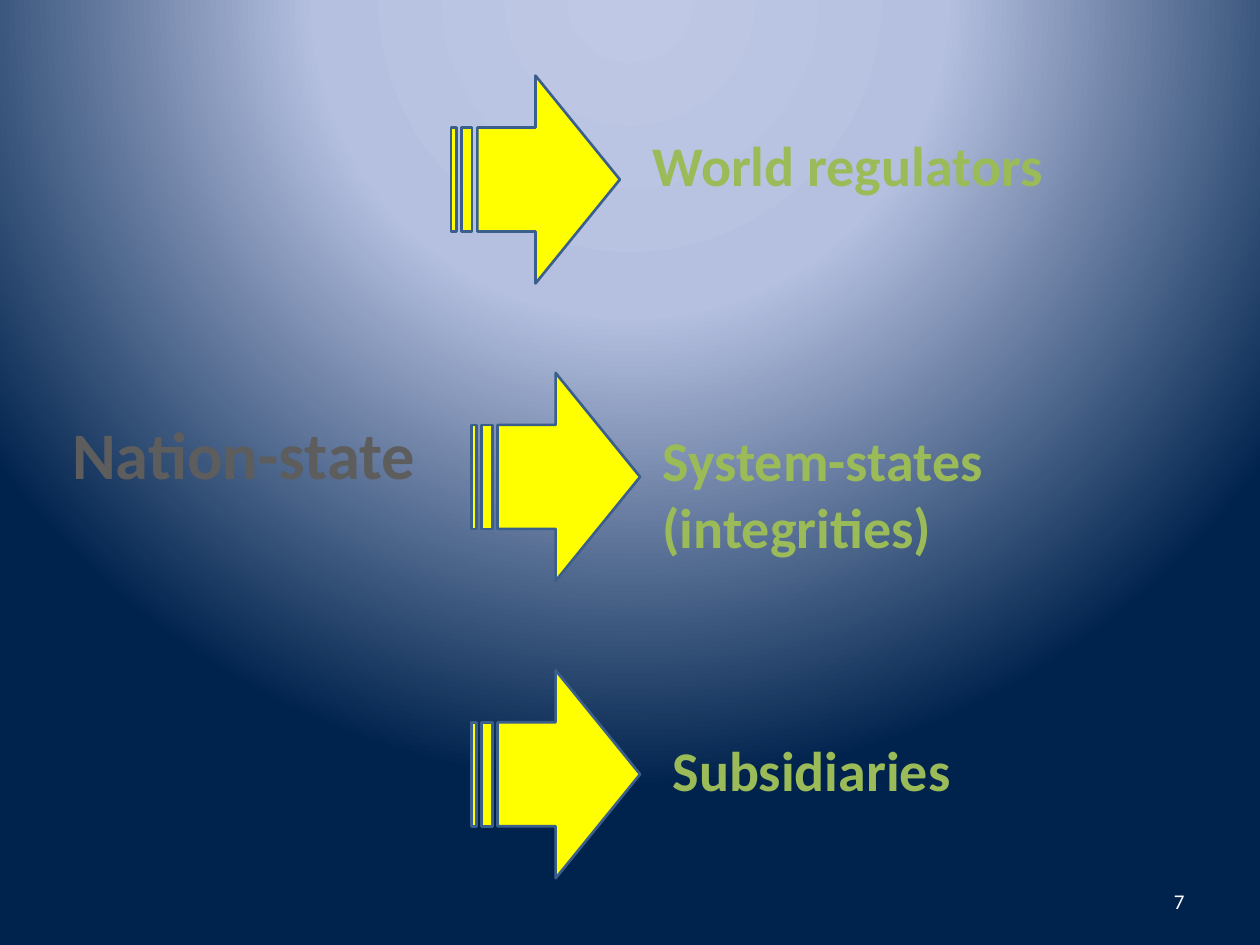
from dataclasses import dataclass

from pptx import Presentation
from pptx import oxml
from pptx import util as u
from pptx.dml.color import RGBColor
from pptx.enum import shapes, text
from pptx.oxml import ns
from pptx.slide import Slide

YELLOW = RGBColor(0xFF, 0xFF, 0x00)
ARROW_LINE = RGBColor(0x3A, 0x5F, 0x8C)
GREEN = RGBColor(0x9B, 0xBB, 0x59)
GRAY = RGBColor(0x5D, 0x5D, 0x5D)
WHITE = RGBColor(0xFF, 0xFF, 0xFF)
BACKGROUND_STOPS = (
    (0, RGBColor(0xBF, 0xC9, 0xE5)),
    (40, RGBColor(0xB5, 0xC0, 0xE0)),
    (100, RGBColor(0x00, 0x23, 0x4D)),
)

FONT = "Calibri"
FIRST_ARROW_TOP = 0.6
ARROW_STEP = 2.36
FIRST_LABEL_LEFT = 5.08
LABEL_STEP = 0.08


@dataclass
class Label:
    lines: list[str]
    left: float
    top: float
    width: float
    height: float
    size: int
    color: RGBColor
    bold: bool = True
    alignment: text.PP_ALIGN = text.PP_ALIGN.LEFT


@dataclass
class Branch:
    lines: list[str]
    arrow_left: float
    label_top: float
    label_height: float


BRANCHES = [
    Branch(["World regulators"], 3.58, 0.68, 1.25),
    Branch(["System-states", "(integrities)"], 3.74, 2.73, 2.36),
    Branch(["Subsidiaries"], 3.74, 5.48, 1.25),
]


def set_background(slide: Slide) -> None:
    slide.background.fill.gradient()
    gradient = slide.element.find(".//" + ns.qn("a:gradFill"))
    stops = "".join(
        f'<a:gs pos="{position * 1000}"><a:srgbClr val="{color}"/></a:gs>'
        for position, color in BACKGROUND_STOPS
    )
    radial = oxml.parse_xml(
        f'<a:gradFill {ns.nsdecls("a")} rotWithShape="1"><a:gsLst>{stops}</a:gsLst>'
        '<a:path path="circle">'
        '<a:fillToRect l="50000" t="-80000" r="50000" b="180000"/>'
        "</a:path></a:gradFill>"
    )
    gradient.getparent().replace(gradient, radial)


def add_label(slide: Slide, label: Label) -> None:
    box = slide.shapes.add_textbox(
        u.Inches(label.left), u.Inches(label.top),
        u.Inches(label.width), u.Inches(label.height),
    )
    frame = box.text_frame
    frame.word_wrap = True
    frame.vertical_anchor = text.MSO_ANCHOR.MIDDLE
    frame.text = "\n".join(label.lines)
    for paragraph in frame.paragraphs:
        paragraph.alignment = label.alignment
        paragraph.font.name = FONT
        paragraph.font.size = u.Pt(label.size)
        paragraph.font.bold = label.bold
        paragraph.font.color.rgb = label.color


def add_arrow(slide: Slide, left: float, top: float) -> None:
    arrow = slide.shapes.add_shape(
        shapes.MSO_SHAPE.STRIPED_RIGHT_ARROW,
        u.Inches(left), u.Inches(top), u.Inches(1.34), u.Inches(1.65),
    )
    arrow.shadow.inherit = False
    arrow.fill.solid()
    arrow.fill.fore_color.rgb = YELLOW
    arrow.line.color.rgb = ARROW_LINE
    arrow.line.width = u.Pt(1.5)


def main() -> None:
    presentation = Presentation()
    presentation.slide_width = u.Inches(10)
    presentation.slide_height = u.Inches(7.5)
    slide = presentation.slides.add_slide(presentation.slide_layouts[6])
    set_background(slide)

    add_label(slide, Label(["Nation-state"], -0.31, 3.22, 4.49, 0.75, 38, GRAY,
                           alignment=text.PP_ALIGN.CENTER))
    for index, branch in enumerate(BRANCHES):
        add_arrow(slide, branch.arrow_left, FIRST_ARROW_TOP + index * ARROW_STEP)
        add_label(slide, Label(branch.lines, FIRST_LABEL_LEFT + index * LABEL_STEP,
                               branch.label_top, 4.17, branch.label_height, 32, GREEN))
    add_label(slide, Label(["7"], 7.17, 6.95, 2.33, 0.4, 12, WHITE, bold=False,
                           alignment=text.PP_ALIGN.RIGHT))

    presentation.save("out.pptx")


if __name__ == "__main__":
    main()
